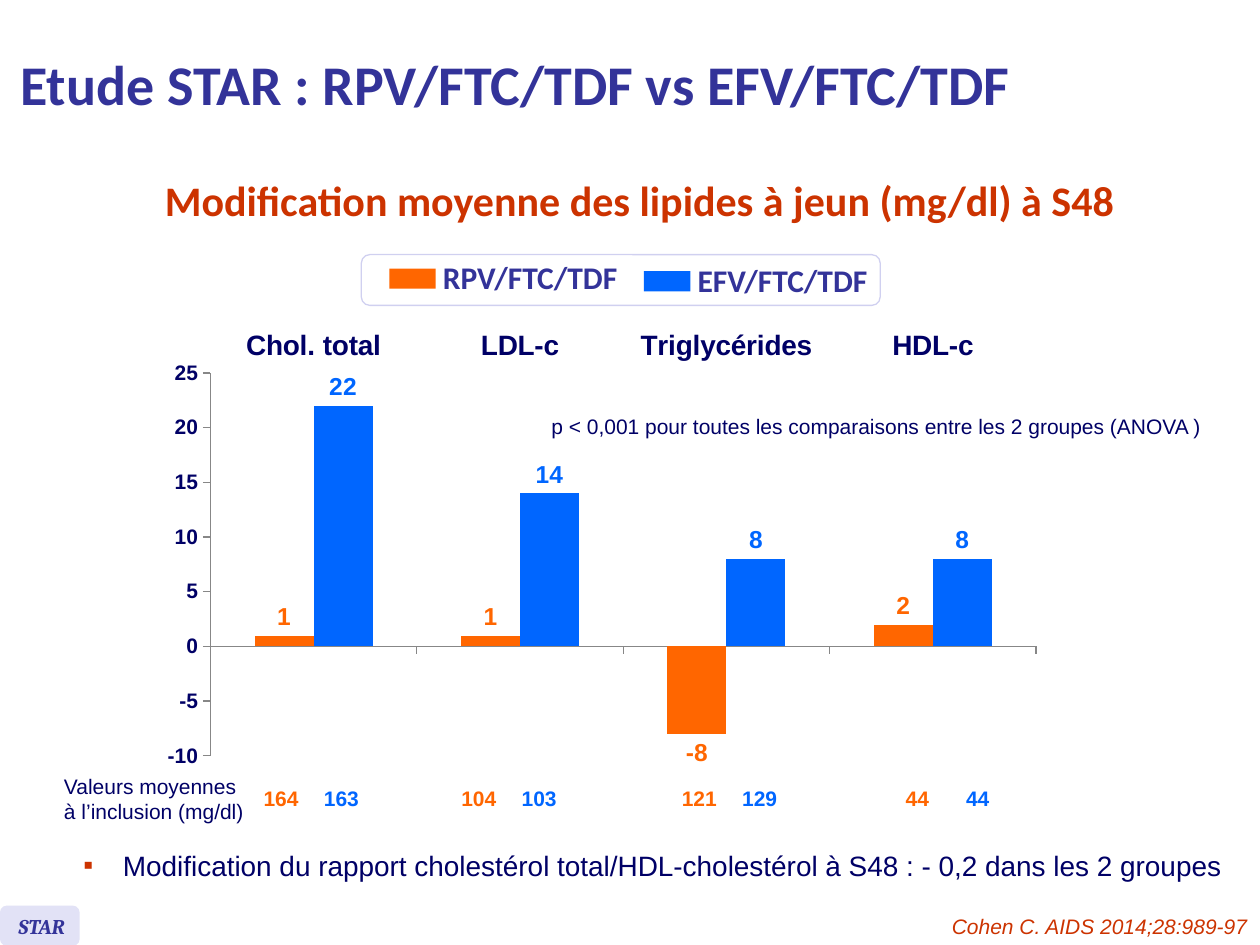
import pptx
import pptx.util
import pptx.chart.data
import pptx.dml.color
import pptx.enum.chart
import pptx.enum.shapes
import pptx.enum.text
import pptx.oxml
import pptx.oxml.ns
from lxml import etree

Pt = pptx.util.Pt
Align = pptx.enum.text.PP_ALIGN
Shape = pptx.enum.shapes.MSO_SHAPE
NAVY, INDIGO, RUST = "000066", "333399", "CC3300"
ORANGE, BLUE = "FF6600", "0066FF"
GREY = "878787"
CATEGORIES = ["Chol. total", "LDL-c", "Triglycérides", "HDL-c"]
CHANGES = [("RPV/FTC/TDF", ORANGE, [1, 1, -8, 2]),
           ("EFV/FTC/TDF", BLUE, [22, 14, 8, 8])]
BASELINES = [(143.5, 34.5, 164, 163), (256.5, 34.5, 104, 103),
             (382.5, 34.5, 121, 129), (510.5, 28, 44, 44)]


def rgb(value):
    return pptx.dml.color.RGBColor.from_string(value)


def set_font(font, size, color, name="Arial", bold=False, italic=False):
    font.size = Pt(size)
    font.name = name
    font.bold = bold
    font.italic = italic
    font.color.rgb = rgb(color)


def place(shape, left, top, width, height):
    shape.left, shape.top = Pt(left), Pt(top)
    shape.width, shape.height = Pt(width), Pt(height)


def add_text(page, bounds, text, size, color, align=Align.LEFT, wrap=True, **style):
    box = page.shapes.add_textbox(*map(Pt, bounds))
    box.text_frame.word_wrap = wrap
    para = box.text_frame.paragraphs[0]
    para.text = text
    para.alignment = align
    set_font(para.font, size, color, **style)
    return para


def add_block(page, kind, bounds, fill, line=None):
    block = page.shapes.add_shape(kind, *map(Pt, bounds))
    block.shadow.inherit = False
    block.fill.solid()
    block.fill.fore_color.rgb = rgb(fill)
    if line:
        block.line.color.rgb = rgb(line)
        block.line.width = Pt(0.75)
    else:
        block.line.fill.background()


def fill_title(page, text):
    title = page.shapes.title
    place(title, 4.5, 4, 687.5, 87)
    title.text_frame.vertical_anchor = pptx.enum.text.MSO_ANCHOR.MIDDLE
    para = title.text_frame.paragraphs[0]
    para.text = text
    para.alignment = Align.LEFT
    set_font(para.font, 32, INDIGO, "Calibri", bold=True)


def fill_bullet(page, text):
    body = page.placeholders[1]
    place(body, 40.5, 481, 670, 26.5)
    body.text_frame.auto_size = pptx.enum.text.MSO_AUTO_SIZE.NONE
    para = body.text_frame.paragraphs[0]
    para.text = text
    para.space_before = Pt(0)
    properties = para._p.get_or_add_pPr()
    properties.set("marL", str(Pt(22.5)))
    properties.set("indent", str(Pt(-22.5)))
    color = etree.SubElement(properties, pptx.oxml.ns.qn("a:buClr"))
    etree.SubElement(color, pptx.oxml.ns.qn("a:srgbClr"), val=RUST)
    etree.SubElement(properties, pptx.oxml.ns.qn("a:buChar"), char="▪")
    set_font(para.font, 16, NAVY)


def fix_plot_area(chart, **fractions):
    plot_area = chart._chartSpace.chart.plotArea
    for old in plot_area.findall(pptx.oxml.ns.qn("c:layout")):
        plot_area.remove(old)
    layout = etree.Element(pptx.oxml.ns.qn("c:layout"))
    manual = etree.SubElement(layout, pptx.oxml.ns.qn("c:manualLayout"))
    settings = {"layoutTarget": "inner", "xMode": "edge", "yMode": "edge", **fractions}
    for tag, value in settings.items():
        etree.SubElement(manual, pptx.oxml.ns.qn("c:" + tag), val=str(value))
    plot_area.insert(0, layout)


def style_axis(axis, size):
    axis.has_major_gridlines = False
    axis.major_tick_mark = pptx.enum.chart.XL_TICK_MARK.OUTSIDE
    axis.minor_tick_mark = pptx.enum.chart.XL_TICK_MARK.NONE
    axis.format.line.color.rgb = rgb(GREY)
    axis.format.line.width = Pt(0.75)
    set_font(axis.tick_labels.font, size, NAVY, bold=True)


def add_lipid_chart(page):
    data = pptx.chart.data.CategoryChartData()
    data.categories = CATEGORIES
    for name, _, values in CHANGES:
        data.add_series(name, values)
    frame = page.shapes.add_chart(
        pptx.enum.chart.XL_CHART_TYPE.COLUMN_CLUSTERED,
        *map(Pt, (84, 184.5, 518.5, 260.5)), data)
    chart = frame.chart
    chart.has_legend = False
    chart.has_title = False
    set_font(chart.font, 16, "002060", bold=True)
    fix_plot_area(chart, x=0.07, y=0.11, w=0.91, h=0.84)
    style_axis(chart.category_axis, 16)
    chart.category_axis.tick_label_position = pptx.enum.chart.XL_TICK_LABEL_POSITION.HIGH
    scale = chart.value_axis
    style_axis(scale, 12)
    scale.minimum_scale, scale.maximum_scale, scale.major_unit = -10, 25, 5
    plot = chart.plots[0]
    plot.gap_width = 150
    plot.overlap = 0
    plot.vary_by_categories = False
    for series, (_, color, _) in zip(plot.series, CHANGES):
        series.invert_if_negative = False
        series.format.fill.solid()
        series.format.fill.fore_color.rgb = rgb(color)
        labels = series.data_labels
        labels.show_value = True
        labels.position = pptx.enum.chart.XL_LABEL_POSITION.OUTSIDE_END
        set_font(labels.font, 14, color, bold=True)


def add_baselines(page):
    add_text(page, (29.5, 438.5, 119.5, 36), "Valeurs moyennes\nà l’inclusion (mg/dl)",
             12, NAVY, wrap=False)
    for left, width, *values in BASELINES:
        for index, (value, (_, color, _)) in enumerate(zip(values, CHANGES)):
            add_text(page, (left + index * 34.5, 445.5, width, 21.5), str(value),
                     12, color, wrap=False, bold=True)


def add_legend(page):
    add_block(page, Shape.ROUNDED_RECTANGLE, (206.5, 145.5, 296.5, 29), "FFFFFF", "D0D0F0")
    for (name, color, _), left, top in zip(CHANGES, (222.5, 368), (153.5, 155)):
        add_block(page, Shape.RECTANGLE, (left, top, 26.5, 11.5), color)
        add_text(page, (left + 23.5, top - 9.5, 126, 29), name, 18, INDIGO,
                 name="Calibri", bold=True)


def main():
    deck = pptx.Presentation()
    deck.slide_width, deck.slide_height = Pt(720), Pt(540)
    page = deck.slides.add_slide(deck.slide_layouts[1])
    fill_title(page, "Etude STAR : RPV/FTC/TDF vs EFV/FTC/TDF")
    heading = add_text(page, (10, 102, 711, 37),
                       "Modification moyenne des lipides à jeun (mg/dl) à S48",
                       24, RUST, Align.CENTER, name="Calibri", bold=True)
    heading.line_spacing = Pt(22.8)
    add_lipid_chart(page)
    add_text(page, (308, 232.5, 400, 21.5),
             "p < 0,001 pour toutes les comparaisons entre les 2 groupes (ANOVA )", 12, NAVY)
    add_baselines(page)
    add_legend(page)
    fill_bullet(page, "Modification du rapport cholestérol total/HDL-cholestérol à S48 : "
                      "- 0,2 dans les 2 groupes")
    add_block(page, Shape.ROUNDED_RECTANGLE, (0, 517.5, 45.5, 23), "E2E2F6")
    add_text(page, (3.5, 518.5, 44, 21.5), "STAR", 12, INDIGO,
             name="Cambria", bold=True, italic=True)
    add_text(page, (504, 518.5, 216, 21.5), "Cohen C. AIDS 2014;28:989-97",
             12, RUST, Align.RIGHT, italic=True)
    deck.save("out.pptx")


if __name__ == "__main__":
    main()
